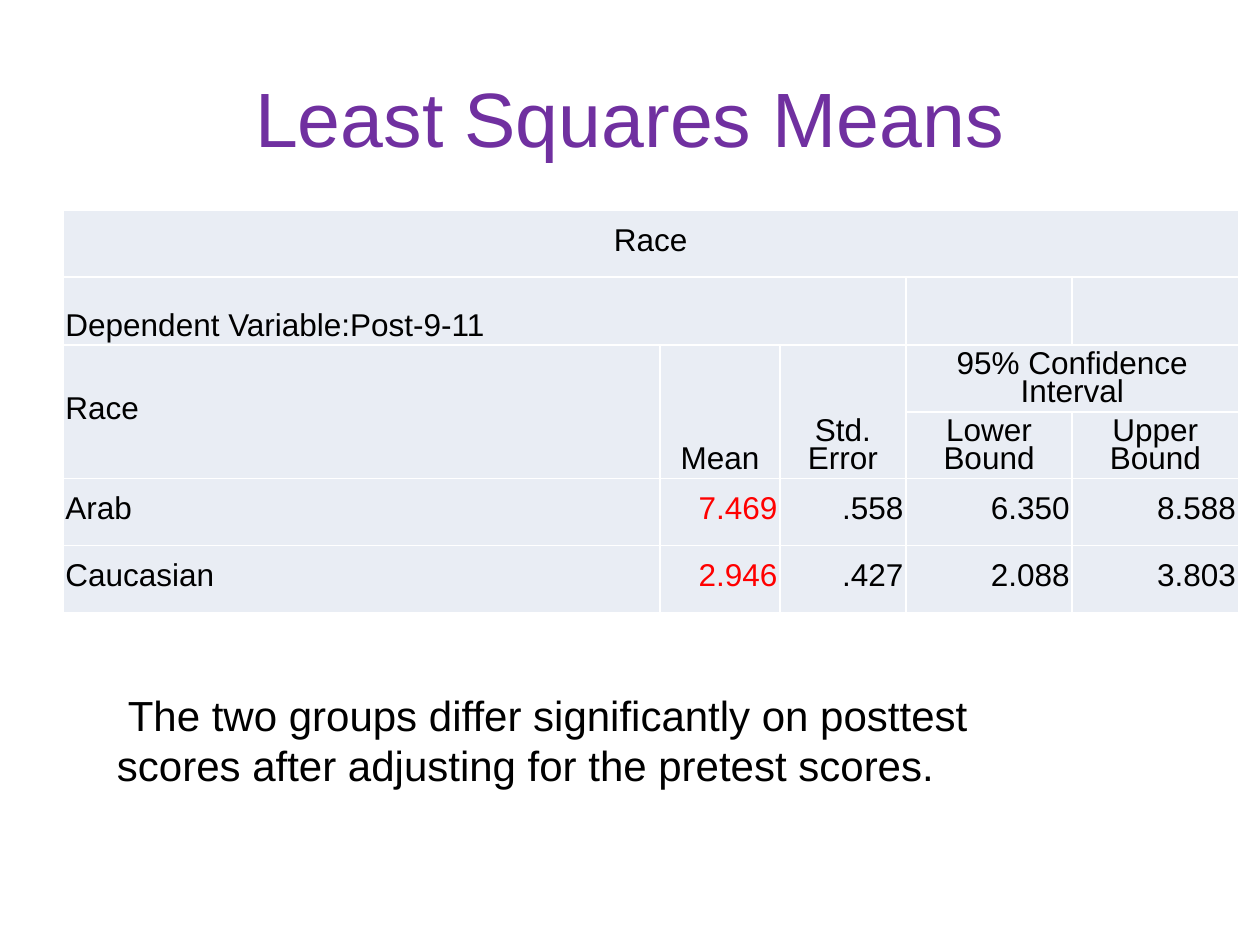
"""Build a slide with a table of least squares means by race."""
from lxml import etree
from pptx import Presentation
from pptx.dml.color import RGBColor
from pptx.enum.text import MSO_ANCHOR, MSO_AUTO_SIZE, PP_ALIGN
from pptx.oxml import parse_xml
from pptx.util import Inches, Pt

LEFT, CENTER, RIGHT = PP_ALIGN.LEFT, PP_ALIGN.CENTER, PP_ALIGN.RIGHT
MIDDLE, BOTTOM = MSO_ANCHOR.MIDDLE, MSO_ANCHOR.BOTTOM
NAMESPACE = "http://schemas.openxmlformats.org/drawingml/2006/main"


def set_font(para, size, color):
    para.font.name = "Arial"
    para.font.size = Pt(size)
    para.font.color.rgb = RGBColor.from_string(color)


def add_borders(cell, color):
    properties = cell._tc.get_or_add_tcPr()
    for side in ("lnL", "lnR", "lnT", "lnB"):
        properties.append(parse_xml(
            f'<a:{side} xmlns:a="{NAMESPACE}" w="{Pt(1)}"><a:solidFill>'
            f'<a:srgbClr val="{color}"/></a:solidFill></a:{side}>'))


deck = Presentation()
deck.slide_width, deck.slide_height = Inches(10), Inches(7.5)
page = deck.slides.add_slide(deck.slide_layouts[5])

title = page.shapes.title
title.left, title.top = Inches(0.5), Inches(0.3)
title.width, title.height = Inches(9), Inches(1.25)
title.text_frame.text = "Least Squares Means"
title.text_frame.vertical_anchor = MIDDLE
title.text_frame.paragraphs[0].alignment = CENTER
set_font(title.text_frame.paragraphs[0], 44, "7030A0")

column_widths = [4.74, 0.95, 1, 1.32, 1.32]
row_heights = [0.53, 0.54, 0.53, 0.53, 0.53, 0.53]
table = page.shapes.add_table(
    len(row_heights), len(column_widths), Inches(0.5), Inches(1.67),
    Inches(sum(column_widths)), Inches(sum(row_heights))).table
table.first_row = table.horz_banding = False
for column, width in zip(table.columns, column_widths):
    column.width = Inches(width)
for row, height in zip(table.rows, row_heights):
    row.height = Inches(height)

for cell in table.iter_cells():
    add_borders(cell, "FFFFFF")
    cell.fill.solid()
    cell.fill.fore_color.rgb = RGBColor.from_string("E9EDF4")
    cell.margin_left = cell.margin_right = Inches(0.02)
    cell.margin_top = cell.margin_bottom = Inches(0.02)

merges = [(0, 0, 0, 4), (1, 0, 1, 2), (2, 0, 3, 0),
          (2, 1, 3, 1), (2, 2, 3, 2), (2, 3, 2, 4)]
for top, left, bottom, right in merges:
    table.cell(top, left).merge(table.cell(bottom, right))

entries = [
    (0, 0, "Race", CENTER, MIDDLE),
    (1, 0, "Dependent Variable:Post-9-11", LEFT, BOTTOM),
    (2, 0, "Race", LEFT, MIDDLE),
    (2, 1, "Mean", CENTER, BOTTOM),
    (2, 2, "Std. Error", CENTER, BOTTOM),
    (2, 3, "95% Confidence Interval", CENTER, BOTTOM),
    (3, 3, "Lower Bound", CENTER, BOTTOM),
    (3, 4, "Upper Bound", CENTER, BOTTOM),
]
groups = [["Arab", "7.469", ".558", "6.350", "8.588"],
          ["Caucasian", "2.946", ".427", "2.088", "3.803"]]
for row, group in enumerate(groups, start=4):
    for column, text in enumerate(group):
        entries.append((row, column, text, RIGHT if column else LEFT, MIDDLE))

for row, column, text, alignment, anchor in entries:
    cell = table.cell(row, column)
    cell.text = text
    cell.vertical_anchor = anchor
    para = cell.text_frame.paragraphs[0]
    para.alignment = alignment
    para.line_spacing = Pt(16)
    is_mean = row >= 4 and column == 1
    set_font(para, 18, "FF0000" if is_mean else "000000")

conclusion = page.shapes.add_textbox(
    Inches(0.83), Inches(5.42), Inches(8), Inches(0.91)).text_frame
conclusion.word_wrap = True
conclusion.auto_size = MSO_AUTO_SIZE.SHAPE_TO_FIT_TEXT
conclusion.text = (" The two groups differ significantly on posttest scores "
                   "after adjusting for the pretest scores.")
set_font(conclusion.paragraphs[0], 24, "000000")

deck.save("out.pptx")
